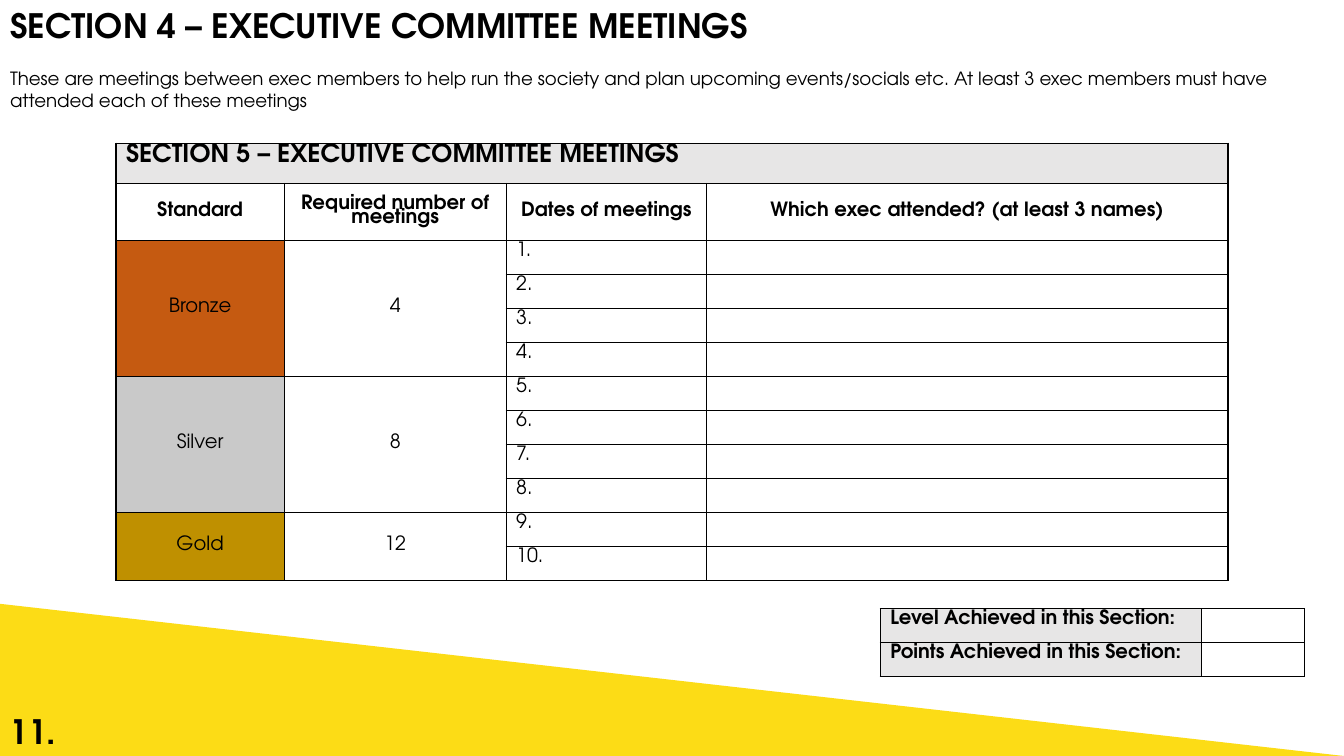
from lxml import etree
from pptx import Presentation
from pptx.dml.color import RGBColor
from pptx.enum import shapes, text
from pptx.oxml.ns import qn
from pptx.util import Inches, Pt

FONT = "TeX Gyre Adventor"
COLOURS = {
    "ink": "000000",
    "paper": "FFFFFF",
    "heading": "E7E6E6",
    "Bronze": "C55A11",
    "Silver": "C9C9C9",
    "Gold": "BF9000",
    "wedge": "FCDC16",
}
LEVELS = [("Bronze", 4, 4), ("Silver", 8, 4), ("Gold", 12, 2)]  # name, meetings, rows
HEADINGS = [
    "Standard",
    "Required number of meetings",
    "Dates of meetings",
    "Which exec attended? (at least 3 names)",
]
ROW_HEIGHT = 0.333
TABLE_SPACING = 0.76


def colour(name):
    return RGBColor.from_string(COLOURS[name])


def write(frame, words, size, bold=False, align=text.PP_ALIGN.LEFT):
    frame.text = words
    para = frame.paragraphs[0]
    para.alignment = align
    for span in para.runs:
        span.font.name = FONT
        span.font.size = Pt(size)
        span.font.bold = bold
        span.font.color.rgb = colour("ink")
    return para


def place(box, left, top, width, height):
    box.left, box.top = Inches(left), Inches(top)
    box.width, box.height = Inches(width), Inches(height)


def fill_placeholder(box, area, words, size, bold):
    place(box, *area)
    frame = box.text_frame
    frame.auto_size = text.MSO_AUTO_SIZE.NONE
    frame.word_wrap = True
    frame.vertical_anchor = text.MSO_ANCHOR.TOP
    para = write(frame, words, size, bold)
    para.space_before = Pt(0)
    properties = para._p.get_or_add_pPr()
    properties.set("marL", "0")
    properties.set("indent", "0")
    etree.SubElement(properties, qn("a:buNone"))


def add_heading(page, left, top, width):
    fill_placeholder(page.shapes.title, (left, top, width, 0.55),
                     "SECTION 4\u00a0– EXECUTIVE COMMITTEE MEETINGS", 24, True)
    fill_placeholder(
        page.placeholders[1], (left, top + 0.62, width, 0.54),
        "These are meetings between exec members to help run the society and plan "
        "upcoming events/socials etc. At least 3 exec members must have attended "
        "each of these meetings", 13, False)


def add_borders(cell):
    properties = cell._tc.get_or_add_tcPr()
    for index, side in enumerate(("lnL", "lnR", "lnT", "lnB")):
        line = etree.Element(qn(f"a:{side}"), w=str(Pt(1)))
        solid = etree.SubElement(line, qn("a:solidFill"))
        etree.SubElement(solid, qn("a:srgbClr"), val=COLOURS["ink"])
        properties.insert(index, line)


def set_cell(cell, words="", fill="paper", size=14, bold=False, centred=False):
    align = text.PP_ALIGN.CENTER if centred else text.PP_ALIGN.LEFT
    para = write(cell.text_frame, words, size, bold, align)
    para.line_spacing = TABLE_SPACING
    if not words:
        etree.SubElement(para._p, qn("a:endParaRPr"), sz=str(size * 100))
    if centred:
        cell.vertical_anchor = text.MSO_ANCHOR.MIDDLE
    cell.fill.solid()
    cell.fill.fore_color.rgb = colour(fill)


def add_grid(page, left, top, widths, heights):
    """Add a table with bordered, blank cells."""
    frame = page.shapes.add_table(
        len(heights), len(widths), Inches(left), Inches(top),
        Inches(sum(widths)), Inches(sum(heights)))
    table = frame.table
    for column, width in zip(table.columns, widths):
        column.width = Inches(width)
    for row, height in zip(table.rows, heights):
        row.height = Inches(height)
        for cell in row.cells:
            set_cell(cell)
            add_borders(cell)
    return table


def add_meetings_table(page, left, top):
    meeting_count = sum(rows for _, _, rows in LEVELS)
    table = add_grid(page, left, top, [1.67, 2.2, 1.99, 5.17],
                     [0.4, 0.57] + [ROW_HEIGHT] * meeting_count)
    table.cell(0, 0).merge(table.cell(0, 3))
    set_cell(table.cell(0, 0), "SECTION 5 – EXECUTIVE COMMITTEE MEETINGS",
             "heading", 18, True)
    for column, heading in enumerate(HEADINGS):
        set_cell(table.cell(1, column), heading, bold=True, centred=True)
    first = 2
    for level, required, rows in LEVELS:
        for column, words, fill in ((0, level, level), (1, str(required), "paper")):
            cell = table.cell(first, column)
            cell.merge(table.cell(first + rows - 1, column))
            set_cell(cell, words, fill, centred=True)
        first += rows
    for number in range(1, meeting_count + 1):
        set_cell(table.cell(number + 1, 2), f"{number}.")


def add_result_table(page, left, top):
    table = add_grid(page, left, top, [3.19, 1.02], [ROW_HEIGHT] * 2)
    for row, measure in enumerate(("Level", "Points")):
        set_cell(table.cell(row, 0), f"{measure} Achieved in this Section:",
                 "heading", bold=True)


def add_footer(page, left, bottom, width):
    height = 1.51
    wedge = page.shapes.add_shape(
        shapes.MSO_SHAPE.RIGHT_TRIANGLE, Inches(left), Inches(bottom - height),
        Inches(width), Inches(height))
    wedge.shadow.inherit = False
    wedge.fill.solid()
    wedge.fill.fore_color.rgb = colour("wedge")
    wedge.line.fill.background()
    number = page.shapes.add_textbox(
        Inches(left), Inches(bottom - 0.5), Inches(0.68), Inches(0.5))
    number.text_frame.word_wrap = True
    write(number.text_frame, "11.", 24, True)


def main():
    deck = Presentation()
    deck.slide_width, deck.slide_height = Inches(13.33), Inches(7.5)
    page = deck.slides.add_slide(deck.slide_layouts[1])
    add_heading(page, 0, 0, 13.33)
    add_meetings_table(page, 1.15, 1.42)
    add_footer(page, 0, 7.5, 13.33)
    add_result_table(page, 8.73, 6.04)
    deck.save("out.pptx")


if __name__ == "__main__":
    main()
